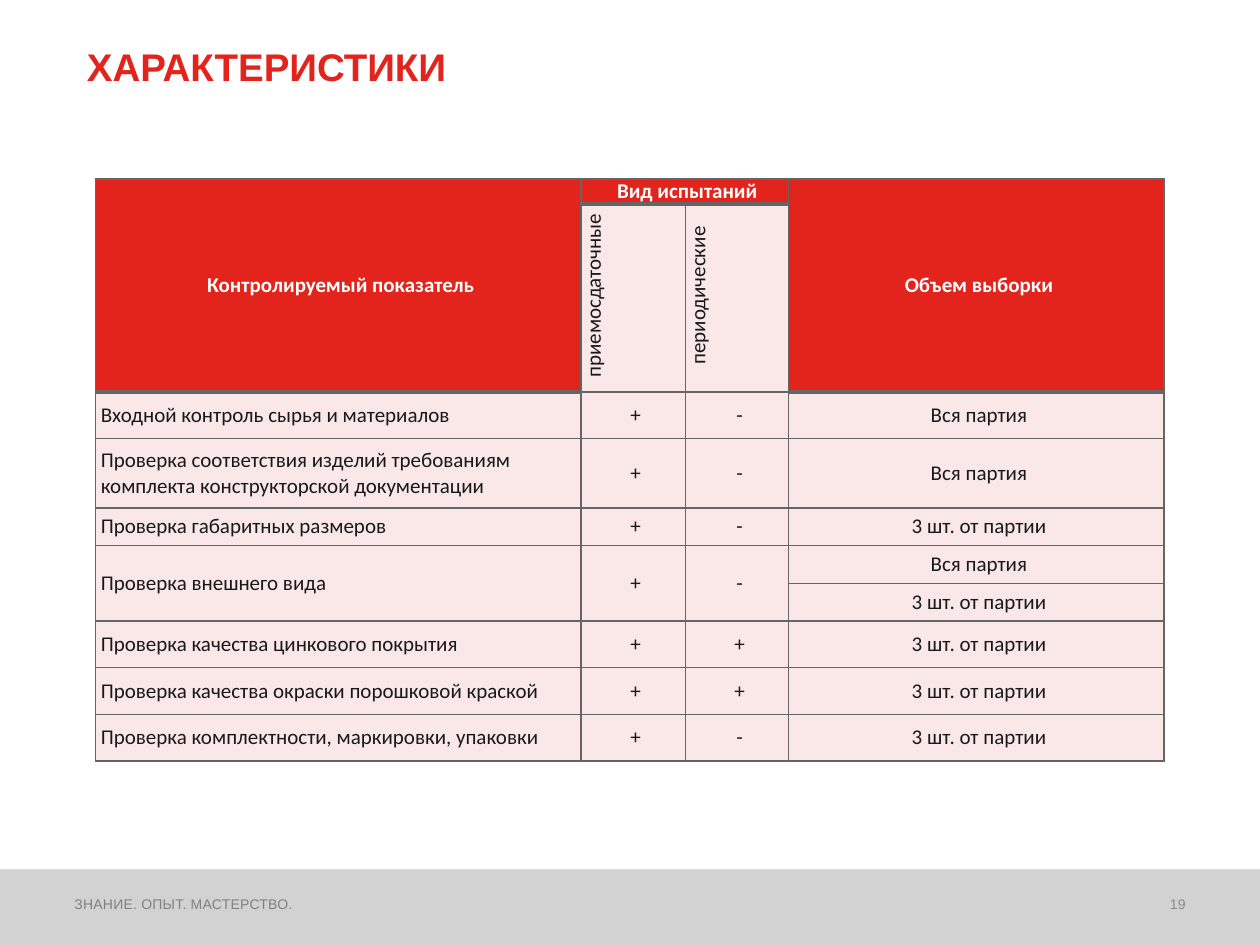
"""Build the slide with the table of product tests."""
from lxml.etree import SubElement
from pptx import Presentation
from pptx.dml.color import RGBColor as RGB
from pptx.enum.shapes import MSO_SHAPE as SHAPE
from pptx.enum.text import MSO_ANCHOR as ANCHOR, MSO_AUTO_SIZE as SIZE, PP_ALIGN as ALIGN
from pptx.oxml import parse_xml
from pptx.oxml.ns import nsdecls, qn
from pptx.util import Inches, Pt

COLORS = {"red": "E2241C", "pink": "FAE8E8", "line": "656565", "ink": "191919",
          "white": "FFFFFF", "bar": "D2D2D2", "motto": "808080", "page": "8C8C8C"}


def paint(fill, color):
    fill.solid()
    fill.fore_color.rgb = RGB.from_string(COLORS[color])


def write(frame, text, color, align, **style):
    para = frame.paragraphs[0]
    para.alignment = align
    run = para.add_run()
    run.text = text
    for key, value in style.items():
        setattr(run.font, key, value)
    run.font.color.rgb = RGB.from_string(COLORS[color])
    return para, run


deck = Presentation()
deck.slide_width, deck.slide_height = Inches(10), Inches(7.5)
slide = deck.slides.add_slide(deck.slide_layouts[5])

bar = slide.shapes.add_shape(SHAPE.RECTANGLE, 0, Inches(6.9), Inches(10), Inches(0.6))
paint(bar.fill, "bar")
bar.line.fill.background()
bar._element.spPr.append(parse_xml(
    f'<a:effectLst {nsdecls("a")}><a:outerShdw blurRad="{Pt(3.1)}" dist="{Pt(1.8)}" '
    'dir="5400000" rotWithShape="0"><a:srgbClr val="000000"><a:alpha val="35000"/>'
    '</a:srgbClr></a:outerShdw></a:effectLst>'))

notes = [("ЗНАНИЕ. ОПЫТ. МАСТЕРСТВО.", 0.59, 4.15, "motto", ALIGN.LEFT),
         ("19", 8.86, 0.55, "page", ALIGN.RIGHT)]
for text, left, width, color, align in notes:
    box = slide.shapes.add_textbox(Inches(left), Inches(7), Inches(width), Inches(0.24))
    frame = box.text_frame
    frame.word_wrap = True
    frame.vertical_anchor = ANCHOR.BOTTOM
    for side in ("left", "right", "top", "bottom"):
        setattr(frame, f"margin_{side}", 0)
    para, run = write(frame, text, color, align, size=Pt(8), name="Arial")
    run._r.get_or_add_rPr().set("spc", "10")

title = slide.shapes.title
place = {"left": 0.59, "top": 0.29, "width": 8.82, "height": 0.65}
for key, value in place.items():
    setattr(title, key, Inches(value))
title.text_frame.auto_size = SIZE.NONE
title.text_frame.vertical_anchor = ANCHOR.TOP
write(title.text_frame, "ХАРАКТЕРИСТИКИ", "red", ALIGN.LEFT,
      size=Pt(22), name="Arial", bold=True)

WHOLE, THREE = "Вся партия", "3 шт. от партии"
rows = [
    ("Контролируемый показатель", "Вид испытаний", "", "Объем выборки"),
    ("", "приемосдаточные", "периодические", ""),
    ("Входной контроль сырья и материалов", "+", "-", WHOLE),
    ("Проверка соответствия изделий требованиям комплекта конструкторской документации",
     "+", "-", WHOLE),
    ("Проверка габаритных размеров", "+", "-", THREE),
    ("Проверка внешнего вида", "+", "-", WHOLE),
    ("", "", "", THREE),
    ("Проверка качества цинкового покрытия", "+", "+", THREE),
    ("Проверка качества окраски порошковой краской", "+", "+", THREE),
    ("Проверка комплектности, маркировки, упаковки", "+", "-", THREE),
]
widths = [3.85, 0.83, 0.82, 2.98]
heights = [0.19, 1.49, 0.37, 0.55, 0.3, 0.3, 0.3, 0.37, 0.37, 0.37]
merges = [(0, 0, 1, 0), (0, 1, 0, 2), (0, 3, 1, 3), (5, 0, 6, 0), (5, 1, 6, 1), (5, 2, 6, 2)]

table = slide.shapes.add_table(len(rows), len(widths), Inches(0.76), Inches(1.42),
                               Inches(8.48), Inches(4.59)).table
table.horz_banding = False
for col, width in zip(table.columns, widths):
    col.width = Inches(width)
for row, height in zip(table.rows, heights):
    row.height = Inches(height)
for top, left, low, right in merges:
    table.cell(top, left).merge(table.cell(low, right))

for i, texts in enumerate(rows):
    for j, text in enumerate(texts):
        cell = table.cell(i, j)
        head = i == 0 or (i == 1 and j in (0, 3))
        cell.vertical_anchor = ANCHOR.MIDDLE
        for side in ("left", "right", "top", "bottom"):
            setattr(cell, f"margin_{side}", 0)
        props = cell._tc.get_or_add_tcPr()
        for side in "LRTB":
            points = 3 if i == 0 and side == "B" else 1
            edge = SubElement(props, qn(f"a:ln{side}"), w=str(Pt(points)))
            solid = SubElement(edge, qn("a:solidFill"))
            SubElement(solid, qn("a:srgbClr"), val=COLORS["line"])
        paint(cell.fill, "red" if head else "pink")
        if i == 1 and j in (1, 2):
            props.set("vert", "vert270")
        if text:
            align = ALIGN.LEFT if j == 0 and not head else ALIGN.CENTER
            para, run = write(cell.text_frame, text, "white" if head else "ink", align,
                              size=Pt(12), name="Calibri", bold=head)
            para._p.get_or_add_pPr().set("marL", str(Inches(0.04)))
        else:
            cell.text_frame.paragraphs[0].font.size = Pt(12)

deck.save("out.pptx")
